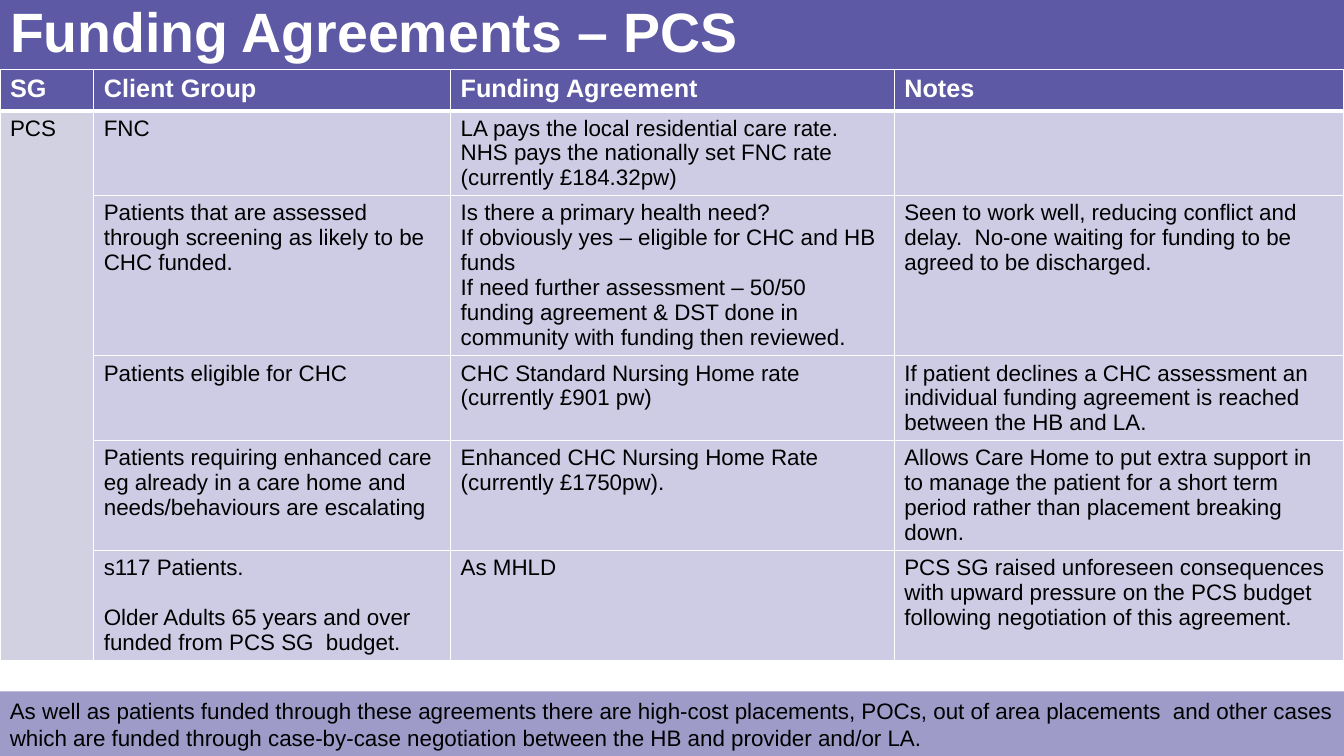
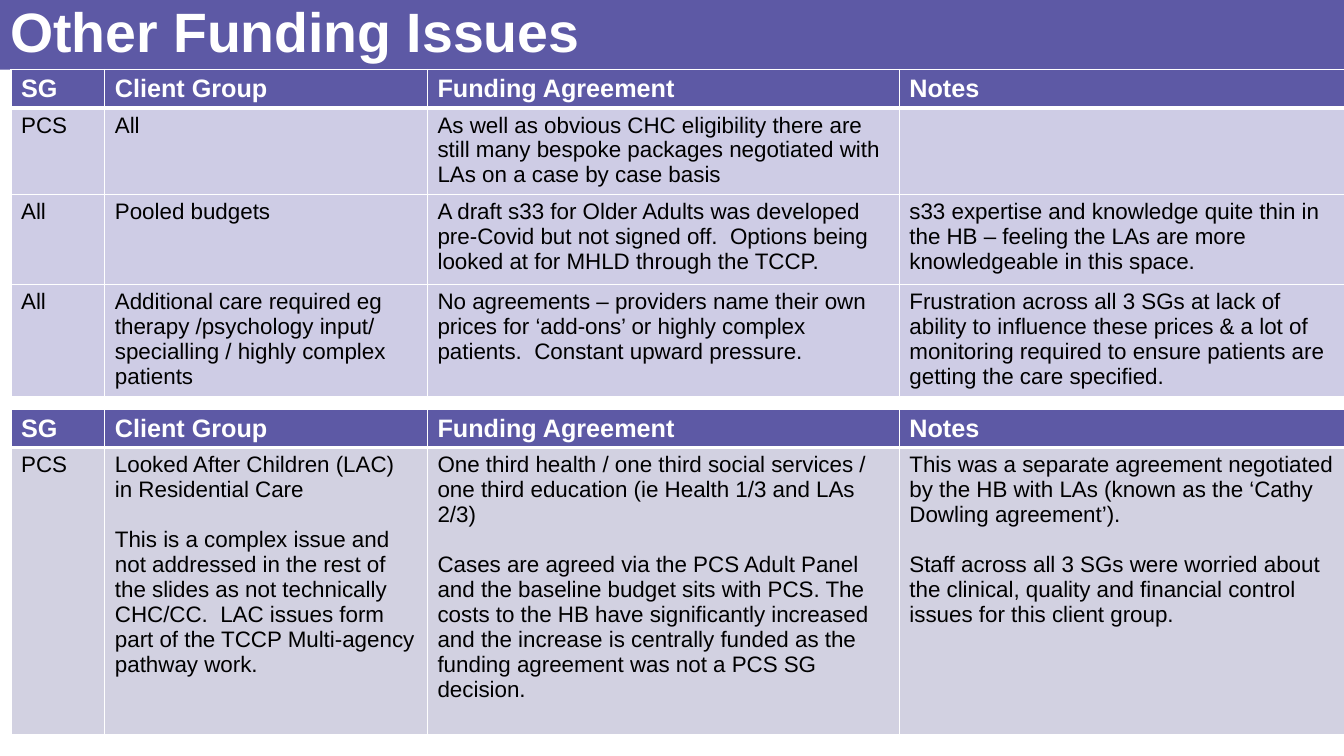
from lxml import etree
from pptx import Presentation
from pptx.dml.color import RGBColor
from pptx.enum.shapes import MSO_SHAPE
from pptx.enum.text import MSO_ANCHOR, MSO_AUTO_SIZE, PP_ALIGN
from pptx.oxml.ns import qn
from pptx.util import Inches, Pt

RECTANGLE = MSO_SHAPE.RECTANGLE
MIDDLE = MSO_ANCHOR.MIDDLE
NO_AUTOFIT = MSO_AUTO_SIZE.NONE
LEFT = PP_ALIGN.LEFT

COLOURS = {
    "band": "5D59A5",
    "footer": "9E9BC9",
    "row": "CECCE5",
    "grey_row": "D2D1E1",
    "white": "FFFFFF",
    "black": "000000",
}
FONT = "Arial"
SLIDE_WIDTH = 13.33
BAND_HEIGHT = 0.69
HEADINGS = ["SG", "Client Group", "Funding Agreement", "Notes"]


def format_text(text_frame, size, colour, bold=False):
    for paragraph in text_frame.paragraphs:
        paragraph.alignment = LEFT
        for run in paragraph.runs:
            run.font.name = FONT
            run.font.size = Pt(size)
            run.font.bold = bold
            run.font.color.rgb = RGBColor.from_string(COLOURS[colour])


def add_funding_table(slide, left, top, widths, heights, rows, first_fill, fill, gap=0):
    table = slide.shapes.add_table(
        len(heights), len(widths), Inches(left), Inches(top),
        Inches(sum(widths)), Inches(sum(heights))).table
    table.horz_banding = False
    for column, width in zip(table.columns, widths):
        column.width = Inches(width)
    for row, height in zip(table.rows, heights):
        row.height = Inches(height)
    for row_index, texts in enumerate([HEADINGS] + rows):
        header = row_index == 0
        for column_index, text in enumerate(texts):
            cell = table.cell(row_index, column_index)
            borders = {"a:lnL": 1, "a:lnR": 1,
                       "a:lnT": 3 if row_index == 1 else 1,
                       "a:lnB": 3 if header else 1}
            for tag, width in borders.items():
                line = etree.SubElement(cell._tc.get_or_add_tcPr(), qn(tag), w=str(Pt(width)))
                solid = etree.SubElement(line, qn("a:solidFill"))
                etree.SubElement(solid, qn("a:srgbClr"), val=COLOURS["white"])
            cell.fill.solid()
            body_fill = fill if column_index else first_fill
            cell.fill.fore_color.rgb = RGBColor.from_string(COLOURS["band" if header else body_fill])
            cell.text_frame.text = text
            if header:
                format_text(cell.text_frame, 18, "white", True)
            else:
                format_text(cell.text_frame, 16, "black")
                for paragraph in cell.text_frame.paragraphs[1:]:
                    paragraph.space_before = Pt(gap)
                if not text:
                    cell.text_frame.paragraphs[0].font.size = Pt(16)
    return table


presentation = Presentation()
presentation.slide_width = Inches(SLIDE_WIDTH)
presentation.slide_height = Inches(7.5)
layout = presentation.slide_layouts[5]

slides = []
for title_text in ["Funding Agreements – PCS", "Other Funding Issues"]:
    slide = presentation.slides.add_slide(layout)
    title = slide.shapes.title
    title.left, title.top = Inches(0), Inches(0)
    title.width, title.height = Inches(11.5), Inches(BAND_HEIGHT)
    title.text_frame.text = title_text
    title.text_frame.auto_size = NO_AUTOFIT
    title.text_frame.vertical_anchor = MIDDLE
    title.text_frame.paragraphs[0].line_spacing = 0.9
    format_text(title.text_frame, 39.6, "white", True)
    slides.append(slide)
agreements_slide, issues_slide = slides

bars = []
for top, height, colour in [(0, BAND_HEIGHT, "band"), (6.86, 0.64, "footer")]:
    bar = agreements_slide.shapes.add_shape(
        RECTANGLE, Inches(0), Inches(top), Inches(SLIDE_WIDTH), Inches(height))
    bar.shadow.inherit = False
    bar.fill.solid()
    bar.fill.fore_color.rgb = RGBColor.from_string(COLOURS[colour])
    bar.line.fill.background()
    bars.append(bar)
title_band, footer = bars
layout.shapes.element.insert(2, title_band.element)

footer.text_frame.text = (
    "As well as patients funded through these agreements there are high-cost placements, POCs, "
    "out of area placements  and other cases which are funded through case-by-case negotiation "
    "between the HB and provider and/or LA.")
footer.text_frame.word_wrap = True
footer.text_frame.vertical_anchor = MIDDLE
format_text(footer.text_frame, 16, "black")

agreement_rows = [
    ["PCS", "FNC",
     "LA pays the local residential care rate. NHS pays the nationally set FNC rate "
     "(currently £184.32pw)", ""],
    ["", "Patients that are assessed through screening as likely to be CHC funded.",
     "Is there a primary health need?\n"
     "If obviously yes – eligible for CHC and HB funds\n"
     "If need further assessment – 50/50 funding agreement & DST done in community "
     "with funding then reviewed.",
     "Seen to work well, reducing conflict and delay.  No-one waiting for funding to be "
     "agreed to be discharged."],
    ["", "Patients eligible for CHC",
     "CHC Standard Nursing Home rate (currently £901 pw)",
     "If patient declines a CHC assessment an individual funding agreement is reached "
     "between the HB and LA."],
    ["", "Patients requiring enhanced care eg already in a care home and needs/behaviours "
     "are escalating",
     "Enhanced CHC Nursing Home Rate (currently £1750pw).",
     "Allows Care Home to put extra support in to manage the patient for a short term "
     "period rather than placement breaking down."],
    ["", "s117 Patients.\nOlder Adults 65 years and over funded from PCS SG  budget.",
     "As MHLD",
     "PCS SG raised unforeseen consequences with upward pressure on the PCS budget "
     "following negotiation of this agreement."],
]
agreement_table = add_funding_table(
    agreements_slide, 0, BAND_HEIGHT, [0.93, 3.54, 4.4, 4.46],
    [0.41, 0.83, 1.59, 0.83, 1.09, 1.08], agreement_rows, "grey_row", "row")
agreement_table.cell(1, 0).merge(agreement_table.cell(5, 0))
agreement_table.cell(5, 1).text_frame.paragraphs[1].space_before = Pt(18)

issue_widths = [0.93, 3.2, 4.68, 4.42]
children_rows = [
    ["PCS",
     "Looked After Children (LAC) in Residential Care\n"
     "This is a complex issue and not addressed in the rest of the slides as not technically "
     "CHC/CC.  LAC issues form part of the TCCP Multi-agency pathway work.",
     "One third health / one third social services / one third education "
     "(ie Health 1/3 and LAs 2/3)\n"
     "Cases are agreed via the PCS Adult Panel and the baseline budget sits with PCS. The costs "
     "to the HB have significantly increased and the increase is centrally funded as the funding "
     "agreement was not a PCS SG decision.",
     "This was a separate agreement negotiated by the HB with LAs (known as the "
     "‘Cathy Dowling agreement’).\n"
     "Staff across all 3 SGs were worried about the clinical, quality and financial control "
     "issues for this client group."],
]
add_funding_table(issues_slide, 0.11, 4.06, issue_widths, [0.38, 2.85],
                  children_rows, "grey_row", "grey_row", 18)

issue_rows = [
    ["PCS", "All",
     "As well as obvious CHC eligibility there are still many bespoke packages negotiated "
     "with LAs on a case by case basis", ""],
    ["All", "Pooled budgets",
     "A draft s33 for Older Adults was developed pre-Covid but not signed off.  Options being "
     "looked at for MHLD through the TCCP.",
     "s33 expertise and knowledge quite thin in the HB – feeling the LAs are more "
     "knowledgeable in this space."],
    ["All", "Additional care required eg therapy /psychology input/ specialling / highly "
     "complex patients",
     "No agreements – providers name their own prices for ‘add-ons’ or highly complex "
     "patients.  Constant upward pressure.",
     "Frustration across all 3 SGs at lack of ability to influence these prices & a lot of "
     "monitoring required to ensure patients are getting the care specified."],
]
add_funding_table(issues_slide, 0.11, BAND_HEIGHT, issue_widths, [0.38, 0.86, 0.89, 1.11],
                  issue_rows, "row", "row")

presentation.save("out.pptx")
